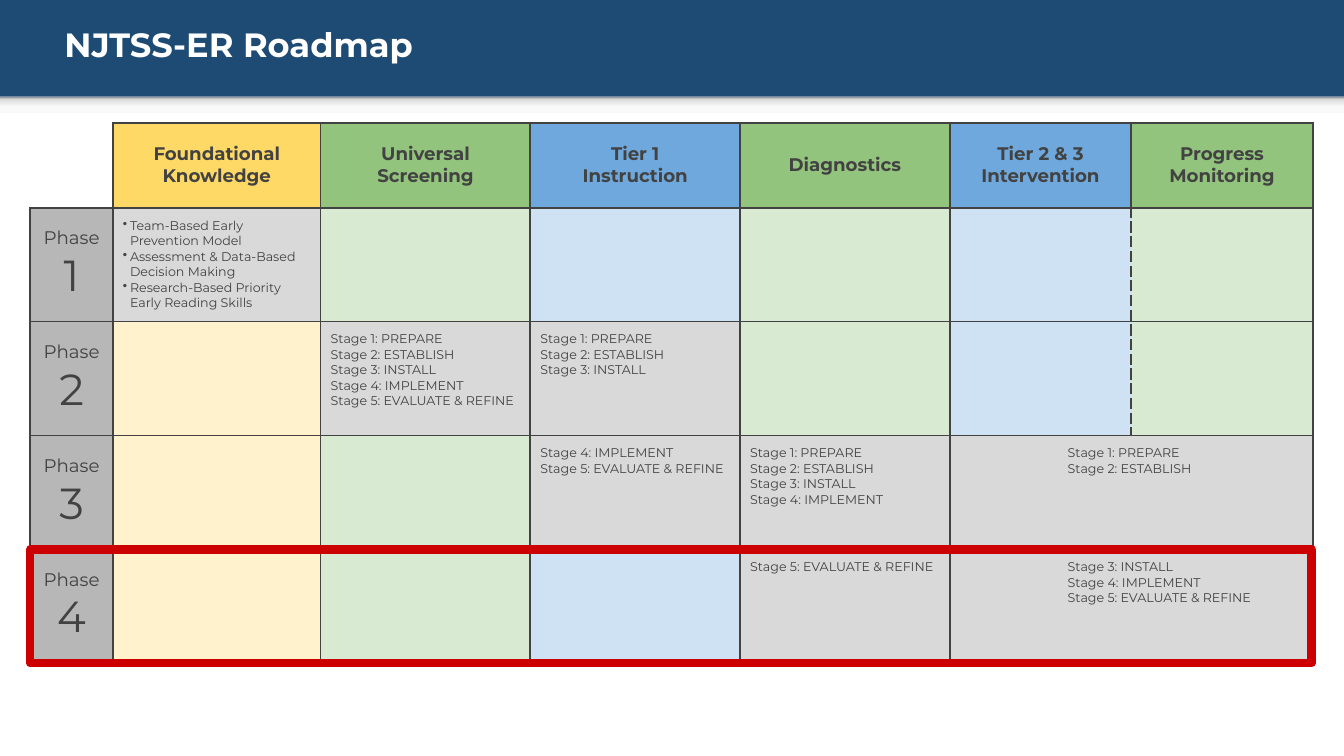
from copy import deepcopy

from lxml import etree
from pptx import Presentation
from pptx.dml.color import RGBColor
from pptx.enum.shapes import MSO_SHAPE
from pptx.enum.text import MSO_ANCHOR, PP_ALIGN
from pptx.oxml.ns import qn
from pptx.util import Inches, Pt

RECTANGLE = MSO_SHAPE.RECTANGLE
TOP, MIDDLE = MSO_ANCHOR.TOP, MSO_ANCHOR.MIDDLE
LEFT, CENTER = PP_ALIGN.LEFT, PP_ALIGN.CENTER

NAVY = RGBColor(0x1E, 0x4B, 0x74)
WHITE = RGBColor(0xFF, 0xFF, 0xFF)
INK = RGBColor(0x42, 0x42, 0x42)
RED = RGBColor(0xCC, 0x00, 0x00)
YELLOW = RGBColor(0xFF, 0xD9, 0x66)
GREEN = RGBColor(0x93, 0xC4, 0x7D)
BLUE = RGBColor(0x6F, 0xA8, 0xDC)
PALE_YELLOW = RGBColor(0xFF, 0xF2, 0xCC)
PALE_GREEN = RGBColor(0xD9, 0xEA, 0xD3)
PALE_BLUE = RGBColor(0xCF, 0xE2, 0xF3)
PHASE_GRAY = RGBColor(0xB7, 0xB7, 0xB7)
STAGE_GRAY = RGBColor(0xD9, 0xD9, 0xD9)
MIST = RGBColor(0xF9, 0xF9, 0xF9)
SILVER = RGBColor(0xDE, 0xDE, 0xDE)
SHADE = RGBColor(0x99, 0x99, 0x99)

FONT = "Montserrat"
COLUMN_WIDTHS = [0.82, 2.06, 2.08, 2.08, 2.08, 1.8, 1.8]
HEADER_HEIGHT, PHASE_HEIGHT = 0.84, 1.13
HEADERS = [
    ("Foundational Knowledge", YELLOW, PALE_YELLOW),
    ("Universal\nScreening", GREEN, PALE_GREEN),
    ("Tier 1\nInstruction", BLUE, PALE_BLUE),
    ("Diagnostics", GREEN, PALE_GREEN),
    ("Tier 2 & 3\nIntervention", BLUE, PALE_BLUE),
    ("Progress\nMonitoring", GREEN, PALE_GREEN),
]
FOUNDATIONS = "\n".join([
    "Team-Based Early Prevention Model",
    "Assessment & Data-Based Decision Making",
    "Research-Based Priority Early Reading Skills",
])
STAGES = ["PREPARE", "ESTABLISH", "INSTALL", "IMPLEMENT", "EVALUATE & REFINE"]
STAGE_RANGES = {
    (2, 2): (1, 5), (2, 3): (1, 3), (3, 3): (4, 5), (3, 4): (1, 4),
    (3, 5): (1, 2), (4, 4): (5, 5), (4, 5): (3, 5),
}


def write(frame, text, size=9, color=INK, bold=False, align=LEFT, last_size=None,
          indent=0, bullet=None, spacing=None):
    """Write each line of text as a formatted paragraph."""
    lines = text.split("\n")
    for number, line in enumerate(lines):
        paragraph = frame.add_paragraph() if number else frame.paragraphs[0]
        paragraph.alignment = align
        if spacing:
            paragraph.line_spacing = spacing
        run = paragraph.add_run()
        run.text = line
        run.font.name = FONT
        run.font.bold = bold
        run.font.color.rgb = color
        is_last = number == len(lines) - 1
        run.font.size = Pt(last_size if last_size and is_last else size)
        if indent:
            properties = paragraph._p.get_or_add_pPr()
            properties.set("marL", str(Inches(indent)))
            properties.set("indent", str(-Inches(indent) if bullet else 0))
            if bullet:
                etree.SubElement(properties, qn("a:buChar")).set("char", bullet)


class RoadmapSlide:
    """Draw the elements of the roadmap in one shared style."""

    def __init__(self, slide):
        """Keep the slide and colour its background."""
        self.slide = slide
        slide.background.fill.solid()
        slide.background.fill.fore_color.rgb = NAVY

    def rectangle(self, left, top, width, height, fill=None, line=None, weight=0):
        """Add a rectangle with a flat fill or an outline."""
        box = self.slide.shapes.add_shape(
            RECTANGLE, Inches(left), Inches(top), Inches(width), Inches(height))
        box.shadow.inherit = False
        if fill is None:
            box.fill.background()
        else:
            box.fill.solid()
            box.fill.fore_color.rgb = fill
        if line is None:
            box.line.fill.background()
        else:
            box.line.color.rgb = line
            box.line.width = Pt(weight)
            etree.SubElement(box.line._get_or_add_ln(), qn("a:round"))
        return box

    def gradient_band(self, left, top, width, height, stops):
        """Add a rectangle that shades from bottom to top."""
        fill = self.rectangle(left, top, width, height, fill=WHITE).fill
        fill.gradient()
        fill.gradient_angle = 90
        stop_list = fill.gradient_stops[0]._gs.getparent()
        for _ in stops[2:]:
            stop_list.append(deepcopy(stop_list[0]))
        for stop, (position, color) in zip(fill.gradient_stops, stops):
            stop.position = position
            stop.color.rgb = color

    def title(self, text):
        """Add the slide title."""
        frame = self.slide.shapes.add_textbox(
            Inches(0.54), Inches(0.02), Inches(12.47), Inches(0.88)).text_frame
        frame.word_wrap = True
        frame.vertical_anchor = MIDDLE
        write(frame, text, size=24, color=WHITE, bold=True, spacing=0.9)

    def table(self, left, top, widths, heights):
        """Add a table without a banded style."""
        grid = self.slide.shapes.add_table(
            len(heights), len(widths), Inches(left), Inches(top),
            Inches(sum(widths)), Inches(sum(heights))).table
        grid.first_row = grid.horz_banding = False
        for column, width in zip(grid.columns, widths):
            column.width = Inches(width)
        for row, height in zip(grid.rows, heights):
            row.height = Inches(height)
        return grid

    def cell(self, cell, fill=None, text="", anchor=TOP, dashed="", blank="",
             right=0.1, **style):
        """Set the borders, fill and text of a table cell."""
        properties = cell._tc.get_or_add_tcPr()
        for side in "LRTB":
            border = etree.SubElement(properties, qn(f"a:ln{side}"), w=str(Pt(1.5)))
            paint = etree.SubElement(border, qn("a:solidFill"))
            color = WHITE if side in blank else INK
            etree.SubElement(paint, qn("a:srgbClr"), val=str(color))
            dash = "dash" if side in dashed else "solid"
            etree.SubElement(border, qn("a:prstDash"), val=dash)
        if fill is None:
            cell.fill.background()
        else:
            cell.fill.solid()
            cell.fill.fore_color.rgb = fill
        if text:
            cell.margin_left = cell.margin_top = cell.margin_bottom = Inches(0.1)
            cell.margin_right = Inches(right)
            cell.vertical_anchor = anchor
            write(cell.text_frame, text, **style)


def draw_roadmap(page):
    """Fill the table of phases and areas."""
    grid = page.table(0.3, 1.22, COLUMN_WIDTHS, [HEADER_HEIGHT] + [PHASE_HEIGHT] * 4)
    page.cell(grid.cell(0, 0), blank="LT")
    for column, (area, strong, _) in enumerate(HEADERS, 1):
        page.cell(grid.cell(0, column), strong, area, MIDDLE,
                  size=13, bold=True, align=CENTER)
    for phase in range(1, 5):
        page.cell(grid.cell(phase, 0), PHASE_GRAY, f"Phase\n{phase}", MIDDLE,
                  size=13, last_size=31, align=CENTER)
        for column, (_, _, pale) in enumerate(HEADERS, 1):
            area = grid.cell(phase, column)
            if (phase, column) == (1, 1):
                page.cell(area, STAGE_GRAY, FOUNDATIONS, MIDDLE, right=0.15,
                          indent=0.07, bullet="•")
            elif (phase, column) in STAGE_RANGES:
                first, last = STAGE_RANGES[phase, column]
                text = "\n".join(f"Stage {n}: {STAGES[n - 1]}"
                                 for n in range(first, last + 1))
                page.cell(area, STAGE_GRAY, text, indent=1.07 if column == 5 else 0)
            elif phase > 2 and column == 6:
                page.cell(area, STAGE_GRAY)
                grid.cell(phase, 5).merge(area)
            else:
                page.cell(area, pale, dashed={5: "R", 6: "L"}.get(column, ""))


def main():
    """Build and save the roadmap slide."""
    deck = Presentation()
    deck.slide_width, deck.slide_height = Inches(13.33), Inches(7.5)
    page = RoadmapSlide(deck.slides.add_slide(deck.slide_layouts[6]))
    page.rectangle(0, 0.96, 13.33, 6.54, fill=WHITE)
    page.gradient_band(0, 0.96, 13.33, 0.16,
                       [(0, MIST), (0.36, MIST), (0.8, SILVER), (1, SHADE)])
    page.title("NJTSS-ER Roadmap")
    draw_roadmap(page)
    page.rectangle(0.3, 5.45, 12.71, PHASE_HEIGHT, line=RED, weight=6)
    deck.save("out.pptx")


if __name__ == "__main__":
    main()
